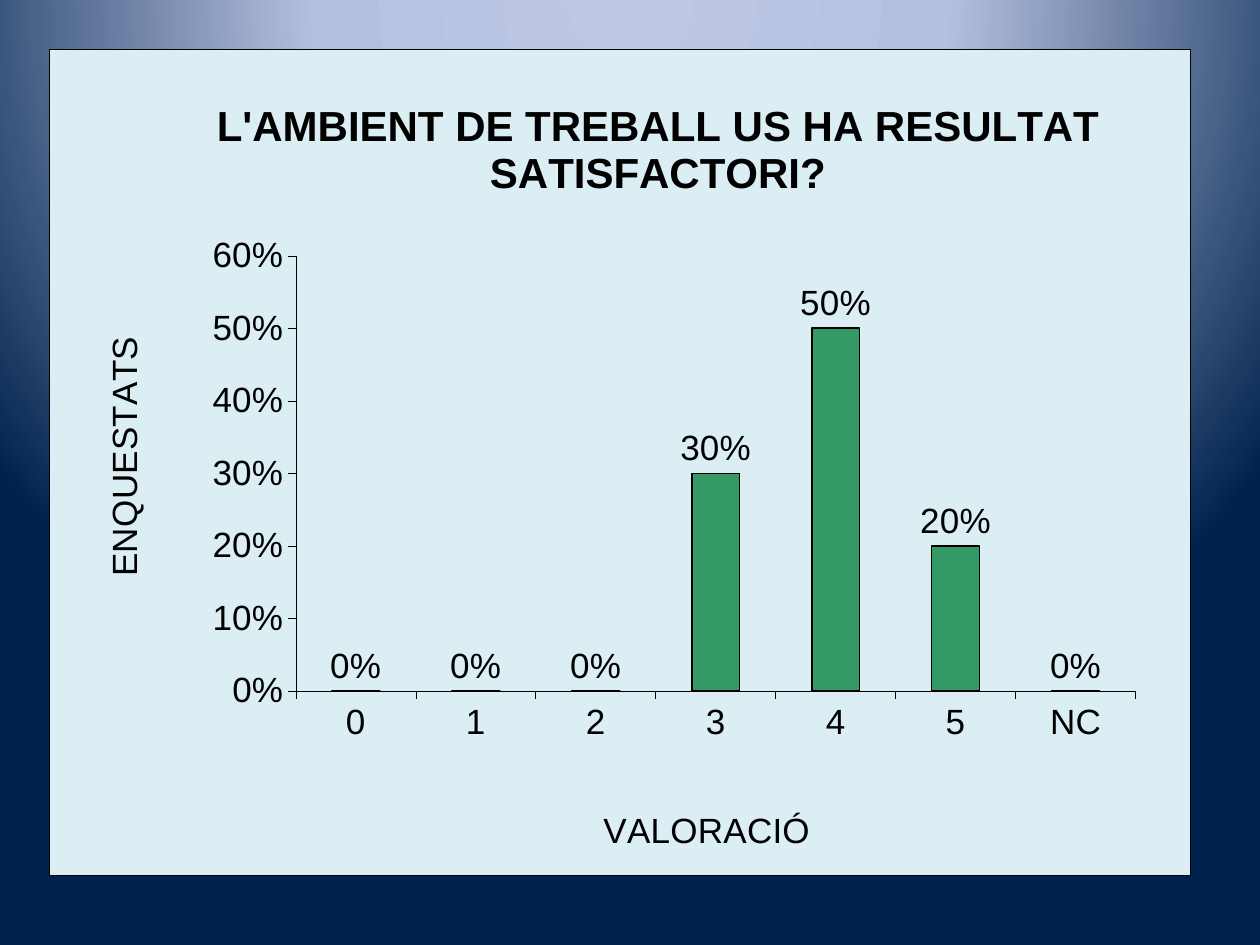
"""Build a survey slide with one column chart on a radial gradient background."""
from lxml.etree import SubElement
from pptx import Presentation
from pptx.chart.data import CategoryChartData
from pptx.dml.color import RGBColor
from pptx.enum.chart import XL_CHART_TYPE as ChartType
from pptx.enum.chart import XL_LABEL_POSITION as LabelPosition
from pptx.enum.chart import XL_TICK_MARK as TickMark
from pptx.oxml import parse_xml
from pptx.oxml.ns import nsdecls, qn
from pptx.util import Inches, Pt

TITLE = "L'AMBIENT DE TREBALL US HA RESULTAT SATISFACTORI?"
CATEGORY_TITLE = "VALORACIÓ"
VALUE_TITLE = "ENQUESTATS"
RATINGS = {"0": 0, "1": 0, "2": 0, "3": 0.3, "4": 0.5, "5": 0.2, "NC": 0}
GRADIENT = [(0, "BFC9E5"), (40, "B5C0E0"), (100, "00234D")]
FONT = "Arial"
BLACK = RGBColor(0x00, 0x00, 0x00)
GREEN = RGBColor(0x33, 0x99, 0x66)
PALE_BLUE = RGBColor(0xDB, 0xEE, 0xF4)


def paint_background(page):
    stops = "".join(
        f'<a:gs pos="{place * 1000}"><a:srgbClr val="{color}"/></a:gs>'
        for place, color in GRADIENT
    )
    page.element.cSld.insert(0, parse_xml(
        f'<p:bg {nsdecls("p", "a")}><p:bgPr><a:gradFill rotWithShape="1">'
        f'<a:gsLst>{stops}</a:gsLst><a:path path="circle">'
        '<a:fillToRect l="50000" t="-80000" r="50000" b="180000"/></a:path>'
        '</a:gradFill><a:effectLst/></p:bgPr></p:bg>'
    ))


def set_font(font, size=20, bold=False):
    font.name, font.size, font.bold = FONT, Pt(size), bold
    font.color.rgb = BLACK


def manual_layout(parent, **settings):
    for old in parent.findall(qn("c:layout")):
        parent.remove(old)
    layout = parse_xml(f'<c:layout {nsdecls("c")}><c:manualLayout/></c:layout>')
    for name, value in settings.items():
        SubElement(layout[0], qn(f"c:{name}")).set("val", str(value))
    text = parent.find(qn("c:tx"))
    parent.insert(0 if text is None else 1, layout)


def write_title(title, text, x, y, **style):
    frame = title.text_frame
    frame.text = text
    set_font(frame.paragraphs[0].runs[0].font, **style)
    manual_layout(title._element, xMode="edge", yMode="edge", x=x, y=y)


def style_axis(axis, text, x, y):
    axis.has_major_gridlines = False
    axis.major_tick_mark = TickMark.OUTSIDE
    axis.minor_tick_mark = TickMark.NONE
    axis.format.line.color.rgb = BLACK
    axis.format.line.width = Pt(0.25)
    set_font(axis.tick_labels.font)
    write_title(axis.axis_title, text, x, y)


def add_ratings_chart(page):
    data = CategoryChartData(number_format="0%")
    data.categories = list(RATINGS)
    data.add_series("Series 1", list(RATINGS.values()))
    chart = page.shapes.add_chart(
        ChartType.COLUMN_CLUSTERED,
        Inches(0.39), Inches(0.39), Inches(9.06), Inches(6.56), data,
    ).chart
    set_font(chart.font)
    chart.has_legend = False
    write_title(chart.chart_title, TITLE, 0.14, 0.05, size=24, bold=True)
    style_axis(chart.category_axis, CATEGORY_TITLE, 0.48, 0.91)

    values = chart.value_axis
    style_axis(values, VALUE_TITLE, 0.04, 0.34)
    values.minimum_scale, values.maximum_scale, values.major_unit = 0, 0.6, 0.1
    values.tick_labels.number_format = "0%"
    values.tick_labels.number_format_is_linked = False

    plot = chart.plots[0]
    plot.gap_width = 150
    plot.vary_by_categories = False
    bars = plot.series[0]
    bars.format.fill.solid()
    bars.format.fill.fore_color.rgb = GREEN
    bars.format.line.color.rgb = BLACK
    bars.format.line.width = Pt(1)
    labels = bars.data_labels
    labels.show_value = True
    labels.number_format, labels.number_format_is_linked = "0%", False
    labels.position = LabelPosition.OUTSIDE_END
    set_font(labels.font)

    space = chart._chartSpace
    manual_layout(
        space.chart.plotArea, layoutTarget="inner", xMode="edge", yMode="edge",
        x=0.216, y=0.25, w=0.736, h=0.527,
    )
    space.chart.addnext(parse_xml(
        f'<c:spPr {nsdecls("c", "a")}>'
        f'<a:solidFill><a:srgbClr val="{PALE_BLUE}"/></a:solidFill>'
        f'<a:ln w="{Pt(0.25)}"><a:solidFill><a:srgbClr val="{BLACK}"/>'
        '</a:solidFill></a:ln></c:spPr>'
    ))


def main():
    deck = Presentation()
    deck.slide_width, deck.slide_height = Inches(10), Inches(7.5)
    page = deck.slides.add_slide(deck.slide_layouts[6])
    paint_background(page)
    add_ratings_chart(page)
    deck.save("out.pptx")


if __name__ == "__main__":
    main()
